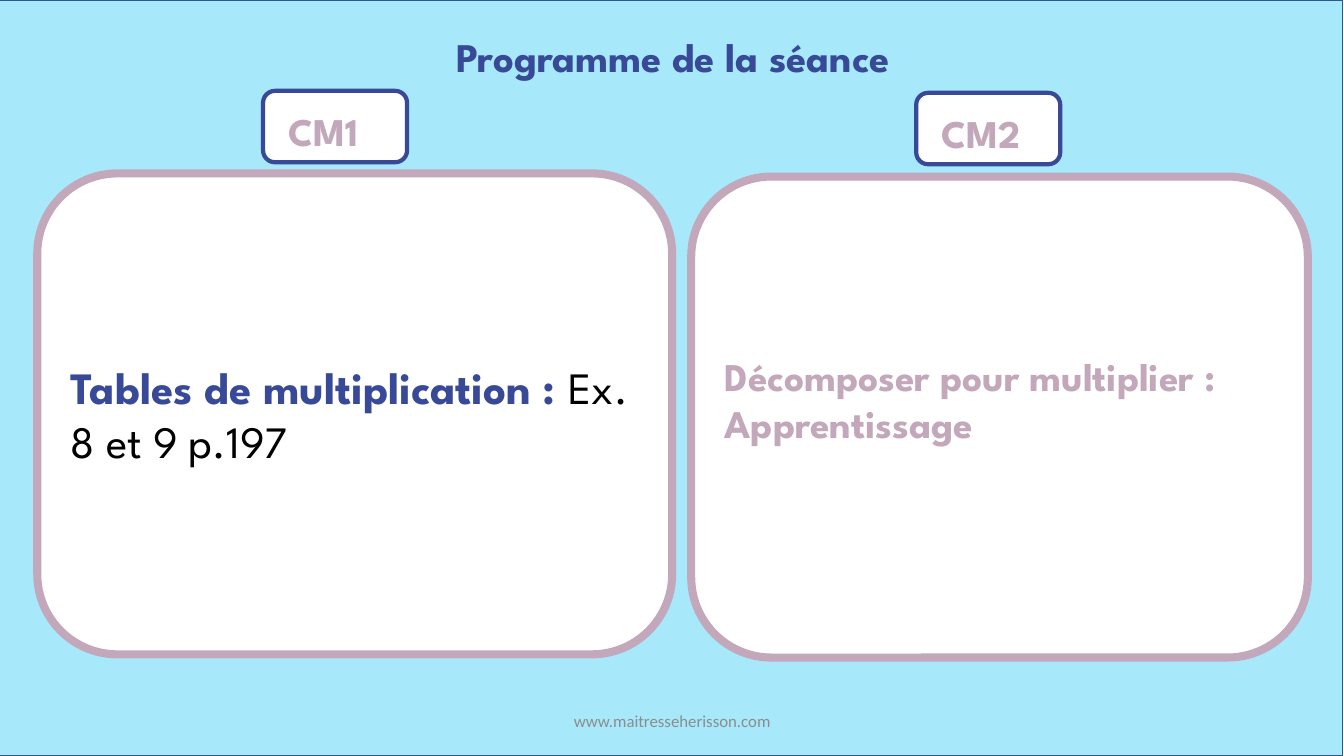
from pptx import Presentation
from pptx.dml.color import RGBColor
from pptx.enum.shapes import MSO_SHAPE
from pptx.enum.text import MSO_ANCHOR, PP_ALIGN
from pptx.util import Cm, Pt

RECT, ROUND = MSO_SHAPE.RECTANGLE, MSO_SHAPE.ROUNDED_RECTANGLE
TOP, MIDDLE = MSO_ANCHOR.TOP, MSO_ANCHOR.MIDDLE
LEFT, CENTER = PP_ALIGN.LEFT, PP_ALIGN.CENTER

SPARTAN = "League Spartan"
NAVY, MAUVE, WHITE, BLACK = "374997", "C3A7BA", "FFFFFF", "000000"
SKY, EDGE, GREY = "A7E8FB", "325491", "8C8C8C"
WIDTH, HEIGHT = 33.87, 19.05


def color(code):
    return RGBColor.from_string(code)


def panel(slide, kind, place, fill, line, weight):
    shape = slide.shapes.add_shape(kind, *map(Cm, place))
    shape.shadow.inherit = False
    shape.fill.solid()
    shape.fill.fore_color.rgb = color(fill)
    shape.line.color.rgb = color(line)
    shape.line.width = Pt(weight)
    return shape


def write(shape, runs, size, align=LEFT, anchor=TOP, font=SPARTAN):
    """Fill a shape with one paragraph of (text, colour, bold) runs."""
    frame = shape.text_frame
    frame.word_wrap = True
    frame.vertical_anchor = anchor
    para = frame.paragraphs[0]
    para.alignment = align
    for text, code, bold in runs:
        run = para.add_run()
        run.text = text
        run.font.name = font
        run.font.size = Pt(size)
        run.font.bold = bold
        run.font.color.rgb = color(code)


def label(slide, place, runs, size, **style):
    write(slide.shapes.add_textbox(*map(Cm, place)), runs, size, **style)


def badge(slide, left, top, text):
    panel(slide, ROUND, (left, top, 3.63, 1.8), WHITE, NAVY, 3)
    label(slide, (left + 0.39, top + 0.28, 2.79, 1.45),
          [(text, MAUVE, True)], 28)


def card(slide, left, top, width, runs, size):
    shape = panel(slide, ROUND, (left, top, width, 12.12), WHITE, MAUVE, 5.75)
    write(shape, runs, size, anchor=MIDDLE)
    return shape


def main():
    deck = Presentation()
    deck.slide_width, deck.slide_height = Cm(WIDTH), Cm(HEIGHT)
    slide = deck.slides.add_slide(deck.slide_layouts[6])

    panel(slide, RECT, (-0.03, 0, WIDTH, HEIGHT), SKY, EDGE, 1)
    label(slide, (0.03, 0.69, WIDTH, 1.5),
          [("Programme de la séance", NAVY, True)], 29, align=CENTER)

    badge(slide, 6.63, 2.29, "CM1")
    card(slide, 0.94, 4.37, 16, [
        ("Tables de multiplication : ", NAVY, True),
        ("Ex. 8 et 9 p.197", BLACK, False),
    ], 32)

    badge(slide, 23.09, 2.34, "CM2")
    lesson = card(slide, 17.42, 4.45, 15.54, [
        ("Décomposer pour multiplier : Apprentissage", MAUVE, True),
    ], 28)
    lesson.text_frame.margin_bottom = Cm(1)

    label(slide, (11.23, 17.65, 11.43, 1.02),
          [("www.maitresseherisson.com", GREY, False)], 12,
          align=CENTER, anchor=MIDDLE, font="Calibri")

    deck.save("out.pptx")


if __name__ == "__main__":
    main()
